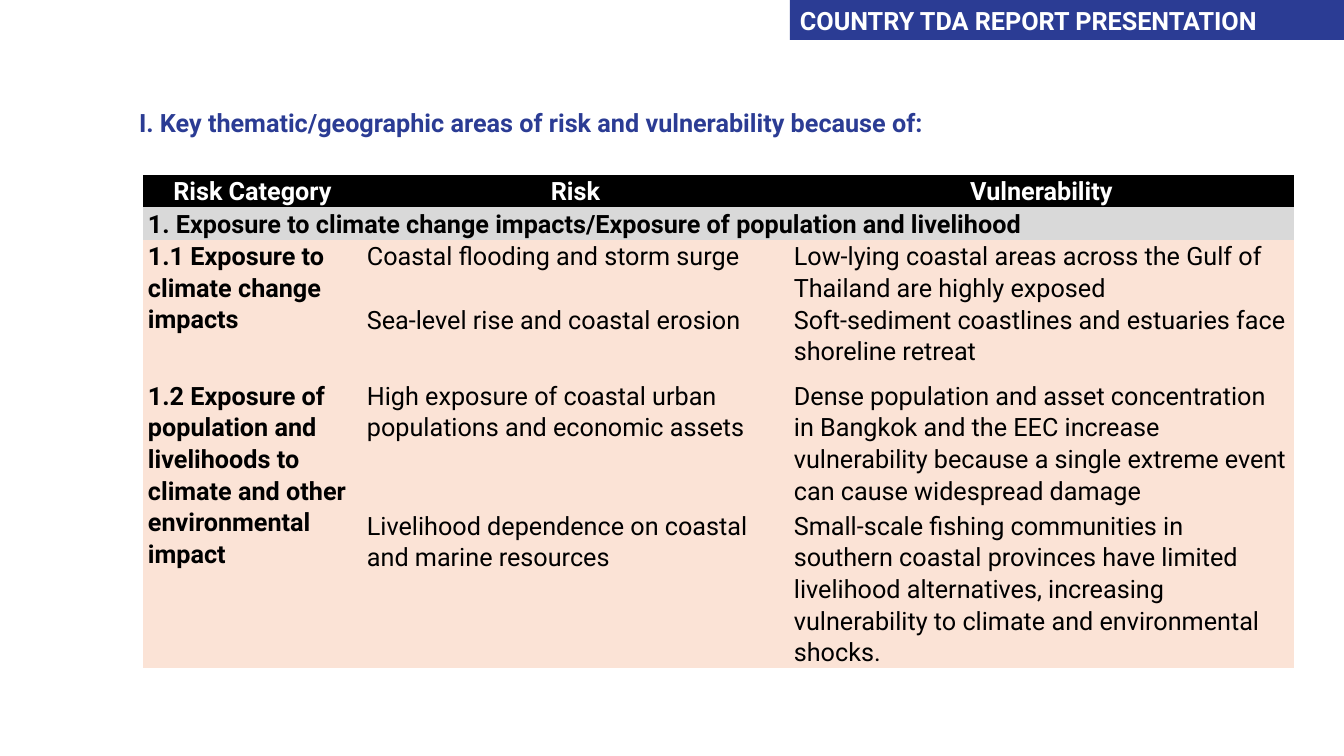
"""Build the slide on key areas of climate risk and vulnerability."""
import pptx
import pptx.dml.color
import pptx.enum.shapes
import pptx.enum.text
import pptx.util

BANNER = "COUNTRY TDA REPORT PRESENTATION"
HEADING = "I. Key thematic/geographic areas of risk and vulnerability because of:"
HEADERS = ("Risk Category", "Risk", "Vulnerability")
SECTION = "1. Exposure to climate change impacts/Exposure of population and livelihood"
CATEGORIES = [
    ("1.1 Exposure to climate change impacts", [
        ("Coastal flooding and storm surge",
         "Low-lying coastal areas across the Gulf of Thailand are highly exposed"),
        ("Sea-level rise and coastal erosion",
         "Soft-sediment coastlines and estuaries face shoreline retreat"),
    ]),
    ("1.2 Exposure of population and livelihoods to climate and other environmental impact", [
        ("High exposure of coastal urban populations and economic assets",
         "Dense population and asset concentration in Bangkok and the EEC increase "
         "vulnerability because a single extreme event can cause widespread damage"),
        ("Livelihood dependence on coastal and marine resources",
         "Small-scale fishing communities in southern coastal provinces have limited "
         "livelihood alternatives, increasing vulnerability to climate and environmental shocks."),
    ]),
]
COLUMN_WIDTHS = (219, 427, 505)
ROW_HEIGHTS = (32, 33, 64, 76, 130, 129)

NAVY, WHITE, BLACK, GREY, PEACH = "2B3C94", "FFFFFF", "000000", "D9D9D9", "FBE3D6"
NO_GRID_STYLE = "{2D5ABB26-0587-4C30-8999-92F81FD0307C}"
LEFT = pptx.enum.text.PP_ALIGN.LEFT
CENTER = pptx.enum.text.PP_ALIGN.CENTER
RIGHT = pptx.enum.text.PP_ALIGN.RIGHT
TOP = pptx.enum.text.MSO_ANCHOR.TOP
MIDDLE = pptx.enum.text.MSO_ANCHOR.MIDDLE


def px(length):
    return round(length * 914400 / 100.8)


def rgb(color):
    return pptx.dml.color.RGBColor.from_string(color)


def write(frame, text, color, bold=True, align=LEFT):
    frame.word_wrap = True
    paragraph = frame.paragraphs[0]
    paragraph.text = text
    paragraph.alignment = align
    font = paragraph.font
    font.name, font.size, font.bold = "Roboto", pptx.util.Pt(18), bold
    font.color.rgb = rgb(color)
    return paragraph


def fill_cell(cell, text, fill, color=BLACK, bold=True, align=LEFT, anchor=TOP):
    cell.fill.solid()
    cell.fill.fore_color.rgb = rgb(fill)
    cell.margin_left = cell.margin_right = px(5)
    cell.margin_top = cell.margin_bottom = 0
    cell.vertical_anchor = anchor
    paragraph = write(cell.text_frame, text, color, bold, align)
    paragraph.line_spacing = 1.07
    paragraph.space_after = pptx.util.Pt(8)


def add_banner(slide):
    banner = slide.shapes.add_shape(
        pptx.enum.shapes.MSO_SHAPE.RECTANGLE, px(790), 0, px(554), px(40))
    banner.shadow.inherit = False
    banner.fill.solid()
    banner.fill.fore_color.rgb = rgb(NAVY)
    banner.line.fill.background()
    banner.text_frame.vertical_anchor = TOP
    write(banner.text_frame, BANNER, WHITE)


def add_risk_table(slide):
    table = slide.shapes.add_table(
        len(ROW_HEIGHTS), len(COLUMN_WIDTHS), px(143), px(175),
        px(sum(COLUMN_WIDTHS)), px(sum(ROW_HEIGHTS))).table
    table.first_row = table.horz_banding = False
    table._tbl.tblPr[0].text = NO_GRID_STYLE
    for column, width in zip(table.columns, COLUMN_WIDTHS):
        column.width = px(width)
    for row, height in zip(table.rows, ROW_HEIGHTS):
        row.height = px(height)

    for column, header in enumerate(HEADERS):
        fill_cell(table.cell(0, column), header, BLACK, WHITE, align=CENTER, anchor=MIDDLE)
        fill_cell(table.cell(1, column), "" if column else SECTION, GREY, anchor=MIDDLE)
    table.cell(1, 0).merge(table.cell(1, len(HEADERS) - 1))

    row = 2
    for category, risks in CATEGORIES:
        first_row = row
        for risk, vulnerability in risks:
            fill_cell(table.cell(row, 0), category if row == first_row else "", PEACH)
            fill_cell(table.cell(row, 1), risk, PEACH, bold=False)
            fill_cell(table.cell(row, 2), vulnerability, PEACH, bold=False)
            row += 1
        table.cell(first_row, 0).merge(table.cell(row - 1, 0))


def main():
    presentation = pptx.Presentation()
    presentation.slide_width, presentation.slide_height = px(1344), px(756)
    slide = presentation.slides.add_slide(presentation.slide_layouts[6])
    add_banner(slide)
    add_risk_table(slide)
    heading = slide.shapes.add_textbox(px(54), px(102), px(879), px(40))
    write(heading.text_frame, HEADING, NAVY, align=RIGHT)
    presentation.save("out.pptx")


if __name__ == "__main__":
    main()
